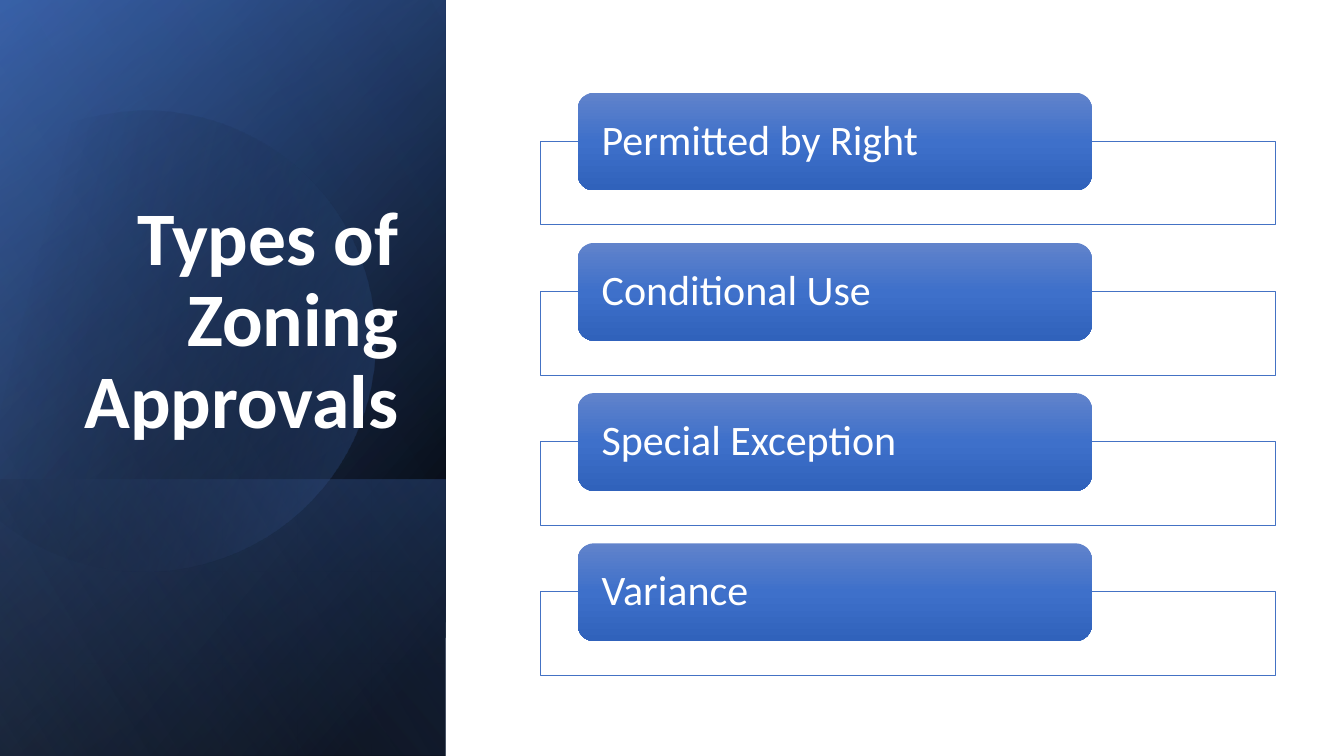
import dataclasses
import math

import lxml.etree
import pptx
import pptx.dml.color
import pptx.enum.shapes
import pptx.enum.text
import pptx.oxml.ns
import pptx.util

Inches = pptx.util.Inches
Pt = pptx.util.Pt
qn = pptx.oxml.ns.qn
Shapes = pptx.enum.shapes.MSO_SHAPE
Align = pptx.enum.text.PP_ALIGN
Anchor = pptx.enum.text.MSO_ANCHOR


@dataclasses.dataclass(frozen=True)
class Theme:
    font: str = "Calibri"
    title_size: int = 54
    label_size: int = 30
    white: str = "FFFFFF"
    black: str = "000000"
    blue: str = "4472C4"
    deep_blue: str = "2F5597"
    pale_blue: str = "8FAADC"
    label_top: str = "6183CB"
    label_middle: str = "3E70CA"
    label_bottom: str = "3062BB"


THEME = Theme()
APPROVALS = ["Permitted by Right", "Conditional Use", "Special Exception", "Variance"]

# Rows on the right: distance from one approval to the next
ROW_PITCH = 1.49

# Disc behind the title, in slide inches: start, cubic curves and straight edges
DISC_ROTATION = 343.9
DISC_CENTER = (1.585, 3.345)
DISC_START = (1.49, 1.1)
DISC_SEGMENTS = [
    [(2.46, 1.12), (3.35, 1.77), (3.63, 2.75)],
    [(3.98, 3.97), (3.28, 5.23), (2.07, 5.58)],
    [(1.31, 5.8), (0.53, 5.61), (-0.03, 5.14)],
    [(-0.15, 5.03)],
    [(-0.15, 1.75)],
    [(0, 1.61)],
    [(0.23, 1.42), (0.5, 1.28), (0.8, 1.19)],
    [(1.03, 1.13), (1.26, 1.1), (1.49, 1.1)],
]


def rgb(color):
    return pptx.dml.color.RGBColor.from_string(color)


def set_alpha(color_element, percent):
    alpha = lxml.etree.SubElement(color_element, qn("a:alpha"))
    alpha.set("val", str(percent * 1000))


def fill_gradient(shape, stops, angle):
    """Stops are (position %, colour, opacity %); the angle runs clockwise."""
    shape.fill.gradient()
    gradient = shape._element.spPr.find(qn("a:gradFill"))
    stop_list = gradient.find(qn("a:gsLst"))
    for old_stop in list(stop_list):
        stop_list.remove(old_stop)
    for position, color, opacity in stops:
        stop = lxml.etree.SubElement(stop_list, qn("a:gs"))
        stop.set("pos", str(position * 1000))
        color_element = lxml.etree.SubElement(stop, qn("a:srgbClr"))
        color_element.set("val", color)
        if opacity < 100:
            set_alpha(color_element, opacity)
    gradient.find(qn("a:lin")).set("ang", str(angle * 60000))


def add_block(slide, kind, left, top, width, height):
    shape = slide.shapes.add_shape(
        kind, Inches(left), Inches(top), Inches(width), Inches(height))
    shape.shadow.inherit = False
    shape.line.fill.background()
    return shape


def write_text(shape, text, *, size, bold=False, align=Align.LEFT,
               anchor=Anchor.MIDDLE, inset=(0.1, 0.05)):
    frame = shape.text_frame
    frame.word_wrap = True
    frame.vertical_anchor = anchor
    frame.margin_left = frame.margin_right = Inches(inset[0])
    frame.margin_top = frame.margin_bottom = Inches(inset[1])
    paragraph = frame.paragraphs[0]
    paragraph.alignment = align
    paragraph.line_spacing = 0.9
    run = paragraph.add_run()
    run.text = text
    run.font.name = THEME.font
    run.font.size = Pt(size)
    run.font.bold = bold
    run.font.color.rgb = rgb(THEME.white)


def add_panel_layer(slide, stops, angle, left=-1.54, top=1.54, width=7.5):
    """A mirrored rectangle turned upright to cover the left panel."""
    layer = add_block(slide, Shapes.RECTANGLE, left, top, width, 4.42)
    layer.rotation = 90
    layer._element.spPr.find(qn("a:xfrm")).set("flipH", "1")
    fill_gradient(layer, stops, angle)


def curve_points(start, segment, steps=24):
    """Points after start along a straight edge or a cubic curve."""
    if len(segment) == 1:
        return segment
    points = [start, *segment]
    sampled = []
    for step in range(1, steps + 1):
        t = step / steps
        weights = [math.comb(3, i) * t**i * (1 - t)**(3 - i) for i in range(4)]
        sampled.append(tuple(
            sum(weight * point[axis] for weight, point in zip(weights, points))
            for axis in (0, 1)))
    return sampled


def add_disc(slide):
    outline = [DISC_START]
    for segment in DISC_SEGMENTS:
        outline += curve_points(outline[-1], segment)

    # Turn the outline back, so that the shape's own rotation restores it
    angle = math.radians(-DISC_ROTATION)
    center_x, center_y = DISC_CENTER
    turned = []
    for x, y in outline:
        dx, dy = x - center_x, y - center_y
        turned.append((
            Inches(center_x + dx * math.cos(angle) - dy * math.sin(angle)),
            Inches(center_y + dx * math.sin(angle) + dy * math.cos(angle))))

    builder = slide.shapes.build_freeform(*turned[0], scale=1.0)
    builder.add_line_segments(turned[1:], close=True)
    disc = builder.convert_to_shape()
    disc.rotation = DISC_ROTATION
    disc.shadow.inherit = False
    disc.line.fill.background()
    fill_gradient(disc, [(29, THEME.black, 0), (100, THEME.blue, 43)], 30)


def add_title(slide, text):
    title = slide.shapes.add_textbox(
        Inches(0.64), Inches(1.84), Inches(3.41), Inches(2.62))
    write_text(title, text, size=THEME.title_size, bold=True,
               align=Align.RIGHT, anchor=Anchor.BOTTOM)


def add_approval(slide, text, offset):
    frame = add_block(slide, Shapes.RECTANGLE, 5.36, 1.4 + offset, 7.29, 0.83)
    frame.fill.solid()
    frame.fill.fore_color.rgb = rgb(THEME.white)
    set_alpha(frame._element.spPr.find(qn("a:solidFill"))[0], 90)
    frame.line.color.rgb = rgb(THEME.blue)
    frame.line.width = Pt(0.5)

    label = add_block(slide, Shapes.ROUNDED_RECTANGLE, 5.73, 0.92 + offset, 5.1, 0.97)
    fill_gradient(label, [(0, THEME.label_top, 100), (50, THEME.label_middle, 100),
                          (100, THEME.label_bottom, 100)], 90)
    write_text(label, text, size=THEME.label_size, inset=(0.19, 0))


def main():
    presentation = pptx.Presentation()
    presentation.slide_width = Inches(13.33)
    presentation.slide_height = Inches(7.5)
    slide = presentation.slides.add_slide(presentation.slide_layouts[6])

    # Left panel, from back to front
    add_panel_layer(slide, [(8, THEME.black, 100), (100, THEME.deep_blue, 100)], 50)
    add_panel_layer(slide, [(0, THEME.black, 0), (99, THEME.blue, 46)], 30)
    add_panel_layer(slide, [(2, THEME.blue, 29), (100, THEME.black, 30)], 130,
                    left=0.84, top=3.92, width=2.74)
    add_disc(slide)
    add_panel_layer(slide, [(0, THEME.black, 0), (99, THEME.pale_blue, 11)], 120)
    add_title(slide, "Types of Zoning Approvals")

    # Approval types
    for row, approval in enumerate(APPROVALS):
        add_approval(slide, approval, row * ROW_PITCH)

    presentation.save("out.pptx")


if __name__ == "__main__":
    main()
